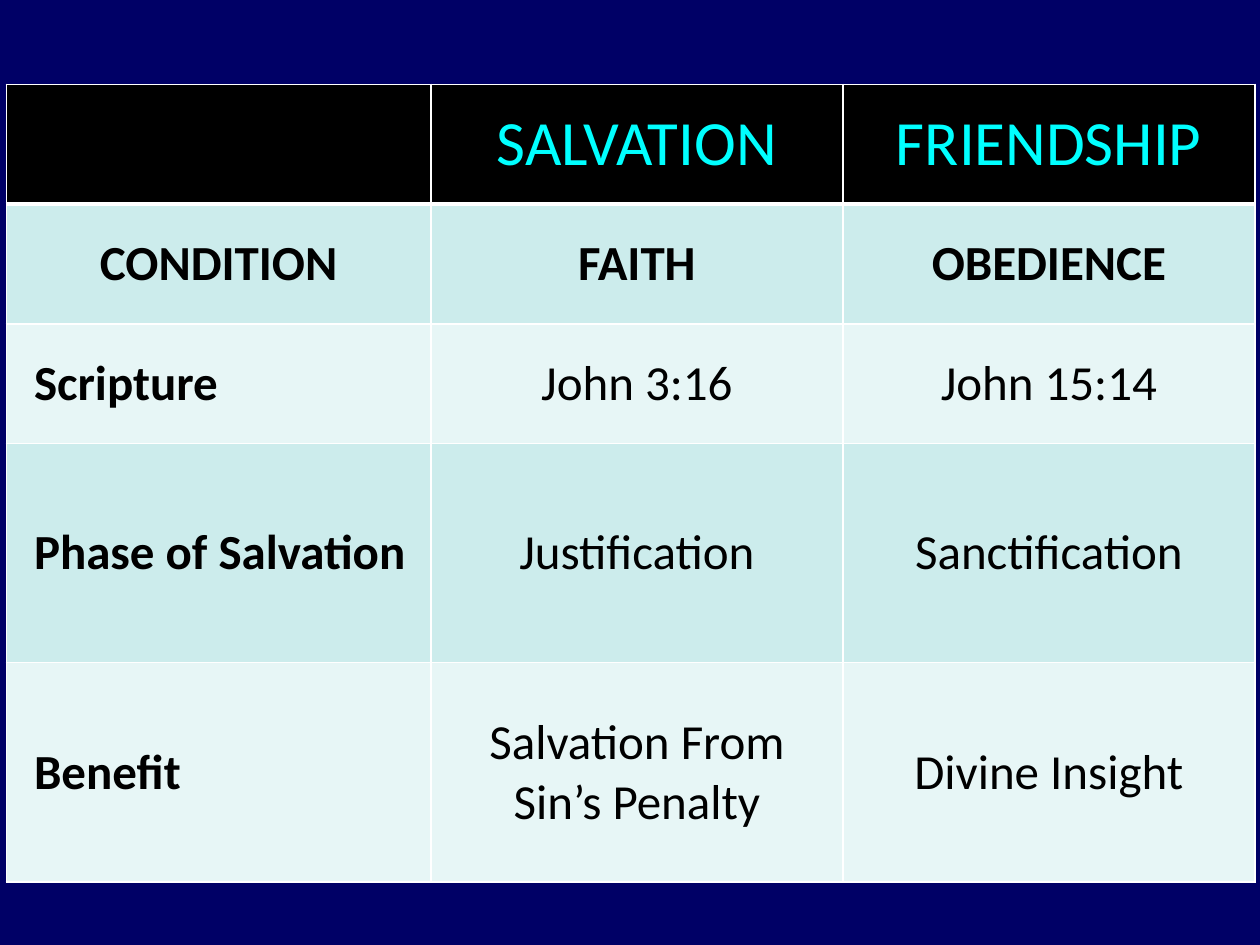
from lxml import etree
from pptx import Presentation
from pptx.dml.color import RGBColor
from pptx.enum import text
from pptx.oxml import ns
from pptx.util import Inches, Pt

NAVY = RGBColor(0x00, 0x00, 0x66)
BLACK = RGBColor(0x00, 0x00, 0x00)
WHITE = RGBColor(0xFF, 0xFF, 0xFF)
CYAN = RGBColor(0x00, 0xFF, 0xFF)
MINT = RGBColor(0xCC, 0xEC, 0xEC)
PALE_MINT = RGBColor(0xE7, 0xF6, 0xF6)

COLUMN_WIDTHS = [3.37, 3.27, 3.27]
ROW_HEIGHTS = [0.95, 0.95, 0.95, 1.74, 1.74]
ROWS = [
    ["", "SALVATION", "FRIENDSHIP"],
    ["CONDITION", "FAITH", "OBEDIENCE"],
    ["Scripture", "John 3:16", "John 15:14"],
    ["Phase of Salvation", "Justification", "Sanctification"],
    ["Benefit", "Salvation From Sin’s Penalty", "Divine Insight"],
]


def add_border(cell, side, width):
    """Draw a white border; side is L, R, T or B and width is in points."""
    properties = cell._tc.get_or_add_tcPr()
    line = etree.SubElement(properties, ns.qn(f"a:ln{side}"), w=str(Pt(width)))
    fill = etree.SubElement(line, ns.qn("a:solidFill"))
    etree.SubElement(fill, ns.qn("a:srgbClr"), val=str(WHITE))


presentation = Presentation()
presentation.slide_width = Inches(10)
presentation.slide_height = Inches(7.5)
slide = presentation.slides.add_slide(presentation.slide_layouts[6])
slide.background.fill.solid()
slide.background.fill.fore_color.rgb = NAVY

table = slide.shapes.add_table(
    len(ROWS), len(COLUMN_WIDTHS), Inches(0.05), Inches(0.67),
    Inches(sum(COLUMN_WIDTHS)), Inches(sum(ROW_HEIGHTS)),
).table
for column, width in zip(table.columns, COLUMN_WIDTHS):
    column.width = Inches(width)
for row, height in zip(table.rows, ROW_HEIGHTS):
    row.height = Inches(height)

for row_index, labels in enumerate(ROWS):
    is_header = row_index == 0
    for column_index, label in enumerate(labels):
        cell = table.cell(row_index, column_index)
        for side in "LRTB":
            under_header = (row_index, side) in [(0, "B"), (1, "T")]
            add_border(cell, side, 3 if under_header else 1)
        cell.fill.solid()
        if is_header:
            cell.fill.fore_color.rgb = BLACK
        else:
            cell.fill.fore_color.rgb = MINT if row_index % 2 else PALE_MINT

        cell.vertical_anchor = text.MSO_ANCHOR.MIDDLE
        cell.text_frame.text = label
        paragraph = cell.text_frame.paragraphs[0]
        if row_index > 1 and column_index == 0:
            paragraph.alignment = text.PP_ALIGN.LEFT
            paragraph._p.get_or_add_pPr().set("marL", str(Inches(0.12)))
        else:
            paragraph.alignment = text.PP_ALIGN.CENTER
        for run in paragraph.runs:
            run.font.name = "Calibri"
            run.font.size = Pt(36 if is_header else 28)
            run.font.bold = row_index == 1 or (column_index == 0 and not is_header)
            run.font.color.rgb = CYAN if is_header else BLACK

presentation.save("out.pptx")
